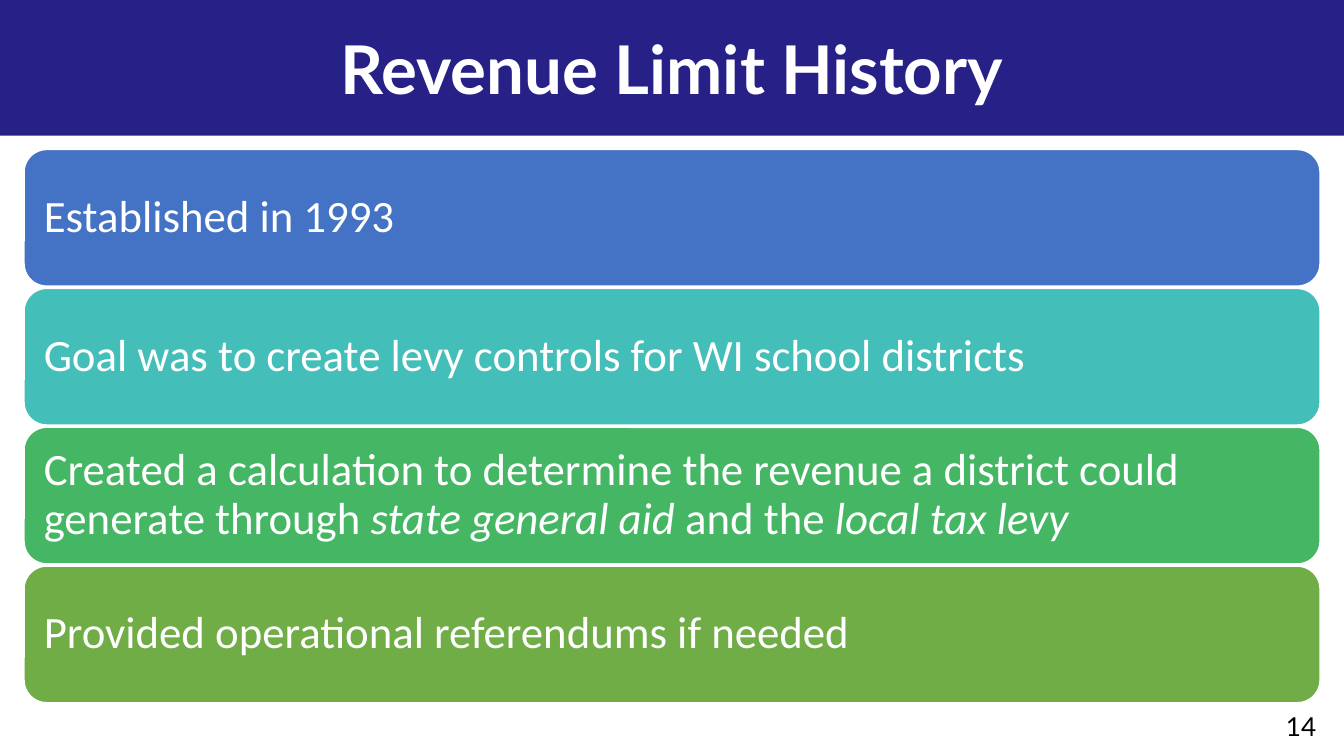
"""Build the Revenue Limit History slide."""
from dataclasses import dataclass

import pptx
import pptx.dml.color
import pptx.enum.shapes
import pptx.enum.text
import pptx.util

Pt = pptx.util.Pt
RGB = pptx.dml.color.RGBColor.from_string
SHAPE = pptx.enum.shapes.MSO_SHAPE
ALIGN = pptx.enum.text.PP_ALIGN
MIDDLE = pptx.enum.text.MSO_ANCHOR.MIDDLE


@dataclass(frozen=True)
class Theme:
    banner: str = "262087"
    white: str = "FFFFFF"
    black: str = "000000"
    heading_font: str = "Lato"
    body_font: str = "Calibri"
    title_size: float = 36
    body_size: float = 24
    number_size: float = 14


@dataclass(frozen=True)
class Run:
    text: str
    italic: bool = False


@dataclass(frozen=True)
class Bar:
    color: str
    runs: tuple[Run, ...]


THEME = Theme()
BAR_LEFT, BAR_TOP, BAR_WIDTH, BAR_HEIGHT, BAR_PITCH = 12.8, 80, 694.5, 73.4, 74.4
BARS = (
    Bar("4472C4", (Run("Established in 1993"),)),
    Bar("43BEB9", (Run("Goal was to create levy controls for WI school districts"),)),
    Bar("45B664", (
        Run("Created a calculation to determine the revenue a district could generate through "),
        Run("state general aid ", True),
        Run("and the "),
        Run("local tax levy", True),
    )),
    Bar("70AD47", (Run("Provided operational referendums if needed"),)),
)


def set_font(p, name: str, size: float, color: str, bold: bool = False) -> None:
    """Set the font shared by all runs of a paragraph."""
    p.font.name = name
    p.font.size = Pt(size)
    p.font.bold = bold
    p.font.color.rgb = RGB(color)


def add_box(slide, kind, left: float, top: float, width: float, height: float, fill: str):
    """Add a filled shape without line or shadow, its text centred vertically."""
    sp = slide.shapes.add_shape(kind, Pt(left), Pt(top), Pt(width), Pt(height))
    sp.shadow.inherit = False
    sp.fill.solid()
    sp.fill.fore_color.rgb = RGB(fill)
    sp.line.fill.background()
    sp.text_frame.word_wrap = True
    sp.text_frame.vertical_anchor = MIDDLE
    return sp


def add_title(slide, text: str) -> None:
    """Add the banner with its title."""
    sp = add_box(slide, SHAPE.RECTANGLE, 0, 0, 720, 72.7, THEME.banner)
    p = sp.text_frame.paragraphs[0]
    p.text = text
    p.alignment = ALIGN.CENTER
    set_font(p, THEME.heading_font, THEME.title_size, THEME.white, bold=True)


def add_bar(slide, bar: Bar, top: float) -> None:
    """Add one rounded bar with its statement."""
    sp = add_box(slide, SHAPE.ROUNDED_RECTANGLE, BAR_LEFT, top, BAR_WIDTH, BAR_HEIGHT, bar.color)
    sp.line.color.rgb = RGB(THEME.white)
    sp.line.width = Pt(1)
    tf = sp.text_frame
    tf.margin_left = tf.margin_right = tf.margin_top = tf.margin_bottom = Pt(7.2)
    p = tf.paragraphs[0]
    p.alignment = ALIGN.LEFT
    p.line_spacing = 0.9
    set_font(p, THEME.body_font, THEME.body_size, THEME.white)
    for run in bar.runs:
        r = p.add_run()
        r.text = run.text
        if run.italic:
            r.font.italic = True


def add_number(slide, text: str) -> None:
    """Add the slide number."""
    sp = slide.shapes.add_textbox(Pt(681.8), Pt(377.3), Pt(38.2), Pt(24.5))
    sp.text_frame.word_wrap = True
    p = sp.text_frame.paragraphs[0]
    p.text = text
    set_font(p, THEME.heading_font, THEME.number_size, THEME.black)


def main() -> None:
    """Build and save the slide."""
    prs = pptx.Presentation()
    prs.slide_width, prs.slide_height = Pt(720), Pt(405)
    slide = prs.slides.add_slide(prs.slide_layouts[6])
    add_title(slide, "Revenue Limit History")
    for i, bar in enumerate(BARS):
        add_bar(slide, bar, BAR_TOP + i * BAR_PITCH)
    add_number(slide, "14")
    prs.save("out.pptx")


if __name__ == "__main__":
    main()
